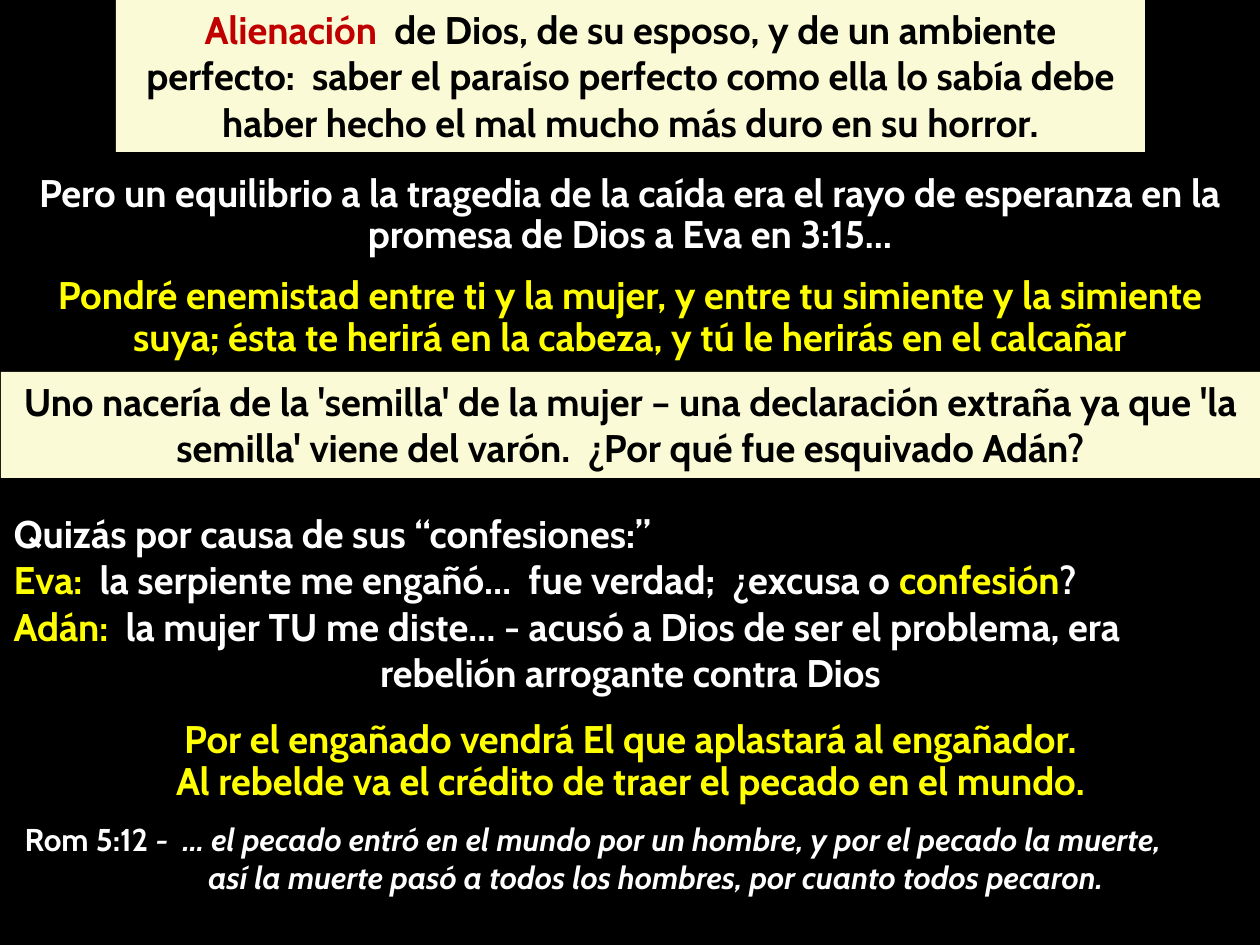
"""Build the slide on Eve's alienation, the promise and the two confessions."""
from dataclasses import dataclass
from typing import Optional

from lxml import etree
from pptx import Presentation
from pptx import util as u
from pptx.dml.color import RGBColor
from pptx.enum import shapes, text
from pptx.oxml import ns

SCALE = 914400 / 126


@dataclass(frozen=True)
class Theme:
    font: str = "Cabin"
    main: int = 22
    small: int = 18
    back: str = "000000"
    cream: str = "FBFAD6"
    dark: str = "000000"
    light: str = "FFFFFF"
    gold: str = "FFFF00"
    red: str = "C00000"


T = Theme()


@dataclass(frozen=True)
class Run:
    words: str
    color: str = T.light
    size: int = T.main
    slant: bool = False


@dataclass(frozen=True)
class Para:
    runs: tuple[Run, ...]
    center: bool = True
    lead: float = 1.0
    gap: float = 0
    left: int = 0
    right: int = 0


@dataclass(frozen=True)
class Block:
    kind: str
    box: tuple[int, int, int, int]
    paras: tuple[Para, ...]
    fill: Optional[str] = None


BLOCKS = (
    Block("title", (116, 0, 1029, 152), (
        Para((
            Run("Alienación  ", T.red),
            Run("de Dios, de su esposo, y de un ambiente perfecto:  saber el paraíso "
                "perfecto como ella lo sabía debe haber hecho el mal mucho más duro "
                "en su horror.", T.dark),
        )),
    ), T.cream),
    Block("text", (0, 168, 1260, 200), (
        Para((Run("Pero un equilibrio a la tragedia de la caída era el rayo de "
                  "esperanza en la promesa de Dios a Eva en 3:15…"),), lead=0.9),
        Para((Run("Pondré enemistad entre ti y la mujer, y entre tu simiente y la "
                  "simiente suya; ésta te herirá en la cabeza, y tú le herirás en el "
                  "calcañar", T.gold),), lead=0.9, gap=11),
    )),
    Block("rect", (1, 372, 1259, 106), (
        Para((Run("Uno nacería de la 'semilla' de la mujer – una declaración extraña "
                  "ya que 'la semilla' viene del varón.  ¿Por qué fue esquivado Adán?",
                  T.dark),)),
    ), T.cream),
    Block("body", (1, 504, 1259, 309), (
        Para((Run("Quizás por causa de sus “confesiones:”"),), center=False),
        Para((
            Run("Eva:  ", T.gold),
            Run("la serpiente me engañó…  fue verdad;  ¿excusa o "),
            Run("confesión", T.gold),
            Run("?"),
        ), center=False),
        Para((
            Run("Adán:  ", T.gold),
            Run("la mujer TU me diste… - acusó a Dios de ser el problema, era"),
        ), center=False),
        Para((Run("rebelión arrogante contra Dios"),)),
        Para((Run("Por el engañado vendrá El que aplastará al engañador.", T.gold),),
             lead=0.9, gap=14.5),
        Para((Run("Al rebelde va el crédito de traer el pecado en el mundo.", T.gold),),
             lead=0.9),
    )),
    Block("text", (5, 814, 1192, 89), (
        Para((
            Run("Rom 5:12 ", size=T.small),
            Run("-  … el pecado entró en el mundo por un hombre, y por el pecado la "
                "muerte,", size=T.small, slant=True),
        ), right=16),
        Para((Run("así la muerte pasó a todos los hombres, por cuanto todos pecaron.",
                  size=T.small, slant=True),), left=110),
    )),
)


def px(num: int) -> int:
    """Turn pixels into EMU."""
    return round(num * SCALE)


def rgb(code: str) -> RGBColor:
    """Turn a hex code into a colour."""
    return RGBColor.from_string(code)


def make(slide, block: Block):
    """Return the placed shape that holds a block."""
    box = [px(n) for n in block.box]
    if block.kind == "text":
        return slide.shapes.add_textbox(*box)
    if block.kind == "rect":
        shape = slide.shapes.add_shape(shapes.MSO_SHAPE.RECTANGLE, *box)
        shape.shadow.inherit = False
        shape.line.fill.background()
        return shape
    shape = slide.shapes.title if block.kind == "title" else slide.placeholders[1]
    shape.left, shape.top, shape.width, shape.height = box
    return shape


def write(par, spec_of: Para) -> None:
    """Format one paragraph and add its runs."""
    par.alignment = text.PP_ALIGN.CENTER if spec_of.center else text.PP_ALIGN.LEFT
    par.line_spacing = spec_of.lead
    par.space_before = u.Pt(spec_of.gap)
    props = par._p.get_or_add_pPr()
    props.set("marL", str(px(spec_of.left)))
    props.set("marR", str(px(spec_of.right)))
    props.set("indent", "0")
    etree.SubElement(props, ns.qn("a:buNone"))
    for item in spec_of.runs:
        run = par.add_run()
        run.text = item.words
        font = run.font
        font.name, font.size, font.bold = T.font, u.Pt(item.size), True
        font.italic = item.slant
        font.color.rgb = rgb(item.color)


def draw(slide, block: Block) -> None:
    """Draw one block with its text."""
    shape = make(slide, block)
    if block.fill:
        shape.fill.solid()
        shape.fill.fore_color.rgb = rgb(block.fill)
    frame = shape.text_frame
    frame.word_wrap = True
    frame.auto_size = text.MSO_AUTO_SIZE.NONE
    frame.vertical_anchor = text.MSO_ANCHOR.TOP
    for num, para in enumerate(block.paras):
        write(frame.add_paragraph() if num else frame.paragraphs[0], para)


def main() -> None:
    """Build and save the deck."""
    deck = Presentation()
    deck.slide_width, deck.slide_height = px(1260), px(945)
    slide = deck.slides.add_slide(deck.slide_layouts[1])
    slide.background.fill.solid()
    slide.background.fill.fore_color.rgb = rgb(T.back)
    for block in BLOCKS:
        draw(slide, block)
    deck.save("out.pptx")


if __name__ == "__main__":
    main()
